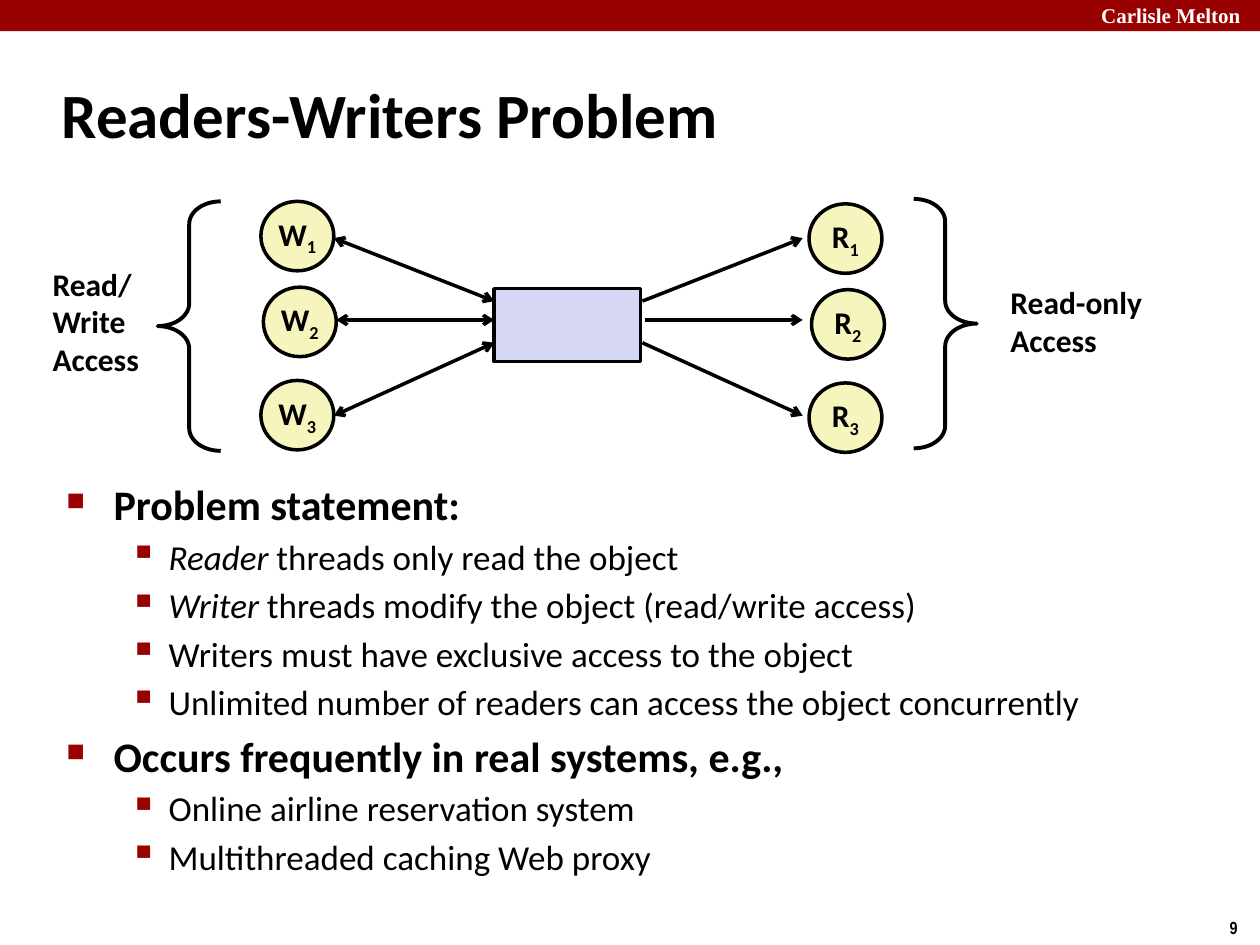
import pptx
import pptx.util
import pptx.dml.color
import pptx.enum.shapes
import pptx.enum.text
import pptx.oxml
import pptx.oxml.ns

Cm, Pt = pptx.util.Cm, pptx.util.Pt
SHAPE = pptx.enum.shapes.MSO_SHAPE
ALIGN = pptx.enum.text.PP_ALIGN
ANCHOR = pptx.enum.text.MSO_ANCHOR
FIT = pptx.enum.text.MSO_AUTO_SIZE

COLORS = {"red": "990000", "ink": "000000", "white": "FFFFFF",
          "box": "D6D6F5", "node": "F6F5BD"}
LABEL = {"name": "Calibri", "size": Pt(18), "bold": True}
TITLE = {**LABEL, "size": Pt(36)}
BRAND = {"name": "Times New Roman", "size": Pt(12), "bold": True}
PAGE = {"name": "Arial Narrow", "size": Pt(10), "bold": True}
LEVELS = [
    {"font": {**LABEL, "size": Pt(24)}, "gap": Pt(4.4), "left": Cm(0.95),
     "hang": Cm(0.95), "mark": "■", "scale": 60},
    {"font": {"name": "Calibri", "size": Pt(20), "bold": False}, "gap": Pt(3.6),
     "left": Cm(2.06), "hang": Cm(0.79), "mark": "▪", "scale": 110},
]
BODY = [
    (0, "", "Problem statement:"),
    (1, "Reader", " threads only read the object"),
    (1, "Writer", " threads modify the object (read/write access)"),
    (1, "", "Writers must have exclusive access to the object"),
    (1, "", "Unlimited number of readers can access the object concurrently"),
    (0, "", "Occurs frequently in real systems, e.g.,"),
    (1, "", "Online airline reservation system"),
    (1, "", "Multithreaded caching Web proxy"),
]


def color(key):
    return pptx.dml.color.RGBColor.from_string(COLORS[key])


def apply(item, form):
    for key, value in form.items():
        setattr(item, key, value)


def place(item, area):
    apply(item, dict(zip(("left", "top", "width", "height"), map(Cm, area))))


def write(para, text, font, ink="ink", **more):
    run = para.add_run()
    run.text = text
    apply(run.font, {**font, **more})
    run.font.color.rgb = color(ink)
    return run


def add_shape(slide, kind, area, fill=None, line=2):
    shape = slide.shapes.add_shape(kind, *map(Cm, area))
    shape.shadow.inherit = False
    if fill:
        shape.fill.solid()
        shape.fill.fore_color.rgb = color(fill)
    else:
        shape.fill.background()
    if line:
        shape.line.color.rgb = color("ink")
        shape.line.width = Pt(line)
    else:
        shape.line.fill.background()
    return shape


def add_text(slide, area, lines, font, ink="ink", wrap=False):
    frame = slide.shapes.add_textbox(*map(Cm, area)).text_frame
    apply(frame, {"word_wrap": wrap, "auto_size": FIT.SHAPE_TO_FIT_TEXT})
    for i, text in enumerate(lines):
        para = frame.add_paragraph() if i else frame.paragraphs[0]
        write(para, text, font, ink)


def add_node(slide, left, top, letter, digit):
    node = add_shape(slide, SHAPE.OVAL, (left, top, 1.47, 1.4), "node")
    frame = node.text_frame
    apply(frame, {"word_wrap": False, "margin_top": 0, "margin_bottom": 0,
                  "vertical_anchor": ANCHOR.MIDDLE})
    para = frame.paragraphs[0]
    para.alignment = ALIGN.CENTER
    write(para, letter, LABEL)
    low = write(para, digit, LABEL)
    low.font._element.set("baseline", "-25000")


def add_arrow(slide, start, end, tips):
    kind = pptx.enum.shapes.MSO_CONNECTOR.STRAIGHT
    arrow = slide.shapes.add_connector(kind, *map(Cm, start + end))
    arrow.line.color.rgb = color("ink")
    arrow.line.width = Pt(2)
    line = arrow.line._get_or_add_ln()
    for tip in tips:
        pptx.oxml.ns.qn("a:" + tip)
        line.append(line.makeelement(pptx.oxml.ns.qn("a:" + tip), {"type": "arrow"}))
    props = arrow._element.spPr
    props.append(props.makeelement(pptx.oxml.ns.qn("a:effectLst"), {}))


def add_brace(slide, kind, left, top):
    brace = add_shape(slide, kind, (left, top, 1.27, 5.03), line=2.25)
    brace.adjustments[0] = 0.36


def set_bullet(para, level):
    props = para._p.get_or_add_pPr()
    props.set("marL", str(level["left"]))
    props.set("indent", str(-level["hang"]))
    space = pptx.oxml.ns.nsdecls("a")
    for part in (
        f'<a:buClr {space}><a:srgbClr val="{COLORS["red"]}"/></a:buClr>',
        f'<a:buSzPct {space} val="{level["scale"] * 1000}"/>',
        f'<a:buChar {space} char="{level["mark"]}"/>',
    ):
        props.append(pptx.oxml.parse_xml(part))


def add_body(slide, area):
    frame = slide.shapes.add_textbox(*map(Cm, area)).text_frame
    frame.word_wrap = True
    for i, (depth, lead, text) in enumerate(BODY):
        para = frame.add_paragraph() if i else frame.paragraphs[0]
        level = LEVELS[depth]
        apply(para, {"level": depth, "space_before": level["gap"]})
        set_bullet(para, level)
        if lead:
            write(para, lead, level["font"], italic=True)
        write(para, text, level["font"])


def set_title(slide, text):
    title = slide.shapes.title
    place(title, (0.99, 1.22, 21.08, 2.11))
    frame = title.text_frame
    apply(frame, {"vertical_anchor": ANCHOR.MIDDLE, "auto_size": FIT.NONE,
                  "word_wrap": True})
    para = frame.paragraphs[0]
    para.alignment = ALIGN.LEFT
    write(para, text, TITLE)


def add_graph(slide):
    add_shape(slide, SHAPE.RECTANGLE, (9.96, 5.82, 2.95, 1.47), "box")
    tops = (4.06, 5.79, 7.67)
    outer = (4.8, 6.45, 8.38)
    inner = (6.07, 6.45, 6.91)
    nudges = (0, 0.05, 0)
    for i, (top, far, near, nudge) in enumerate(zip(tops, outer, inner, nudges), 1):
        add_node(slide, 5.26 + nudge, top, "W", str(i))
        add_node(slide, 16.31 + nudge, top + 0.05, "R", str(i))
        add_arrow(slide, (6.73 + nudge, far), (9.96, near), ("headEnd", "tailEnd"))
        add_arrow(slide, (16.18, far), (12.95 + nudge, near), ("headEnd",))
    add_brace(slide, SHAPE.LEFT_BRACE, 3.18, 4.06)
    add_brace(slide, SHAPE.RIGHT_BRACE, 18.42, 4.01)
    add_text(slide, (0.81, 5.21, 2.26, 2.57), ("Read/", "Write", "Access"), LABEL)
    add_text(slide, (20.12, 5.59, 3.23, 1.8), ("Read-only", "Access"), LABEL)


def main():
    deck = pptx.Presentation()
    apply(deck, {"slide_width": Cm(25.4), "slide_height": Cm(19.05)})
    slide = deck.slides.add_slide(deck.slide_layouts[5])
    add_shape(slide, SHAPE.RECTANGLE, (0, 0, 25.4, 0.63), "red", line=None)
    add_text(slide, (21.95, -0.08, 3.63, 0.76), ("Carlisle Melton",), BRAND,
             "white", wrap=True)
    add_text(slide, (24.54, 18.36, 0.86, 0.69), ("9",), PAGE)
    set_title(slide, "Readers-Writers Problem")
    add_body(slide, (1.09, 9.53, 23.04, 8.08))
    add_graph(slide)
    deck.save("out.pptx")


if __name__ == "__main__":
    main()
